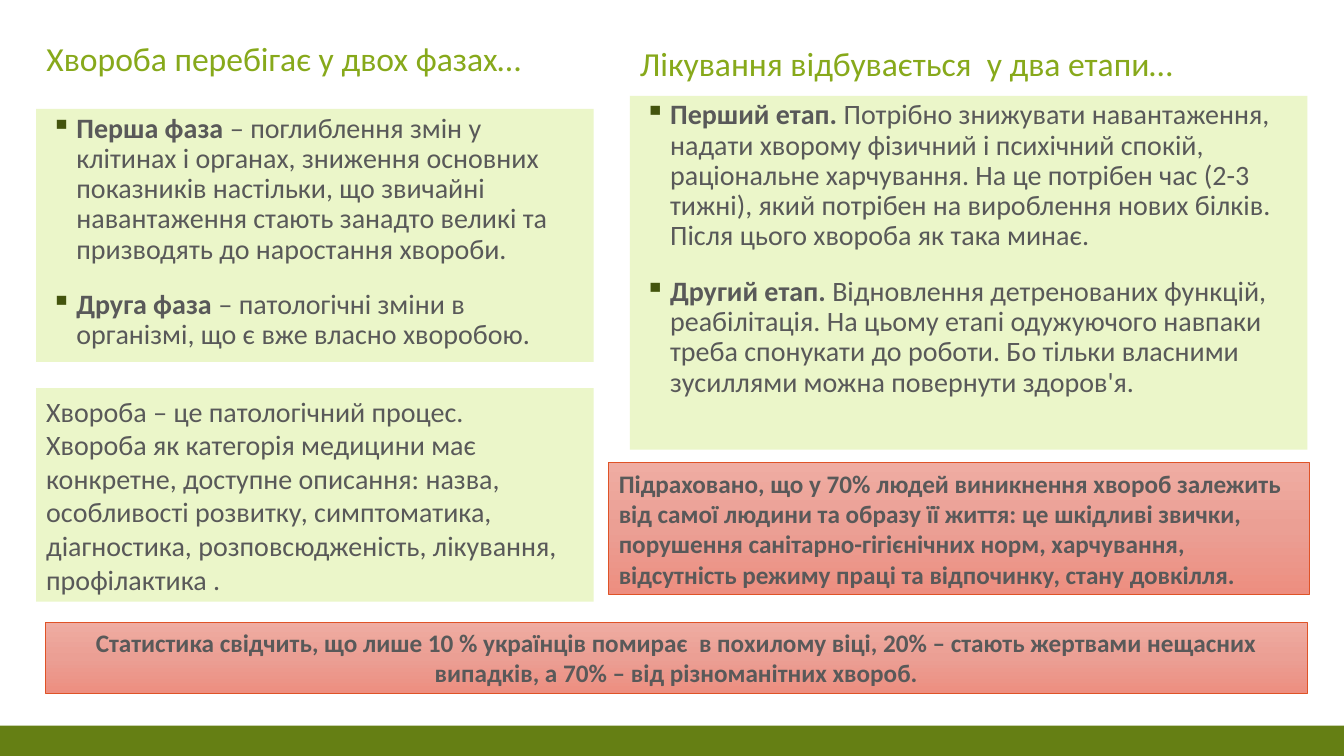
"""Builds a slide on the phases of illness and the stages of treatment."""
from copy import deepcopy
from dataclasses import dataclass
from typing import Any

from lxml.etree import SubElement
from pptx import Presentation
from pptx.dml.color import RGBColor
from pptx.enum.shapes import MSO_SHAPE as Preset
from pptx.enum.text import MSO_ANCHOR as Anchor, MSO_AUTO_SIZE as AutoSize, PP_ALIGN as Align
from pptx.oxml.ns import qn
from pptx.util import Pt

COLORS = {
    "bar": "657F14", "panel": "EBF6C9", "heading": "87A91B", "text": "595959",
    "bullet": "43540D", "alert_line": "DF5327",
}
ALERT_STOPS = {0: "EFACA2", 0.5: "EB9F94", 1: "ED8E80"}
Paragraphs = tuple[tuple[str, str], ...]


@dataclass(frozen=True)
class Heading:
    """A heading above one column."""
    left: float
    top: float
    width: float
    text: str


@dataclass(frozen=True)
class Box:
    """A rectangle whose paragraphs are pairs of bold and regular text."""
    left: float
    top: float
    width: float
    height: float
    paragraphs: Paragraphs = ()
    fill: str = "panel"
    size: float = 20
    bulleted: bool = False
    alert: bool = False
    align: Any = Align.LEFT


HEADINGS = (
    Heading(25.9, 23.8, 389.5, "Хвороба перебігає у двох фазах…"),
    Heading(450, 27.4, 478.8, "Лікування відбувається  у два етапи…"),
)

BOXES = (
    Box(0, 518.4, 960, 21.6, fill="bar"),
    Box(25.9, 77.8, 398.2, 180.7, (
        ("Перша фаза ", "‒ поглиблення змін у клітинах і органах, зниження основних показників "
         "настільки, що звичайні навантаження стають занадто великі та призводять до "
         "наростання хвороби."),
        ("Друга фаза ", "‒ патологічні зміни в організмі, що є вже власно хворобою."),
    ), bulleted=True),
    Box(450, 68.4, 483.8, 252.7, (
        ("Перший етап. ", "Потрібно знижувати навантаження, надати хворому фізичний і психічний "
         "спокій, раціональне харчування. На це потрібен час (2-3 тижні), який потрібен на "
         "вироблення нових білків. Після цього хвороба як така минає."),
        ("Другий етап. ", "Відновлення детренованих функцій, реабілітація. На цьому етапі "
         "одужуючого навпаки треба спонукати до роботи. Бо тільки власними зусиллями можна "
         "повернути здоров'я."),
    ), bulleted=True),
    Box(32.4, 444.2, 901.4, 51.1, (
        ("Статистика свідчить, що лише 10 % українців помирає  в похилому віці, 20% – стають "
         "жертвами нещасних випадків, а 70% – від різноманітних хвороб.", ""),
    ), size=18, alert=True, align=Align.CENTER),
    Box(25.9, 277.2, 398.2, 152.6, (
        ("", "Хвороба ‒ це патологічний процес."),
        ("", "Хвороба як категорія медицини має конкретне, доступне описання: назва, "
         "особливості розвитку, симптоматика, діагностика, розповсюдженість, лікування, "
         "профілактика ."),
    )),
    Box(434.9, 330.5, 500.4, 94.3, (
        ("Підраховано, що у 70% людей виникнення хвороб залежить від самої людини та образу "
         "її життя: це шкідливі звички, порушення санітарно-гігієнічних норм, харчування, "
         "відсутність режиму праці та відпочинку, стану довкілля.", ""),
    ), size=18, alert=True),
)


def set_values(target: Any, values: dict[str, Any]) -> None:
    """Set every named attribute on the target."""
    for name, value in values.items():
        setattr(target, name, value)


def add_text(paragraph: Any, text: str, size: float, color: str, bold: bool = False) -> None:
    """Add a formatted run to the paragraph."""
    run = paragraph.add_run()
    run.text = text
    set_values(run.font, {"name": "Calibri", "size": Pt(size), "bold": bold})
    run.font.color.rgb = RGBColor.from_string(COLORS[color])


def add_bullet(paragraph: Any) -> None:
    """Give the paragraph a square bullet, a hanging indent and list spacing."""
    set_values(paragraph, {"line_spacing": 0.9, "space_before": Pt(18)})
    properties = paragraph._p.get_or_add_pPr()
    properties.set("marL", str(Pt(21.6)))
    properties.set("indent", str(-Pt(18)))
    bullet_color = SubElement(properties, qn("a:buClr"))
    SubElement(bullet_color, qn("a:srgbClr"), val=COLORS["bullet"])
    SubElement(properties, qn("a:buChar"), char="▪")


def format_alert(shape: Any) -> None:
    """Apply the vertical red gradient and thin outline."""
    shape.fill.gradient()
    shape.fill.gradient_angle = 270
    stop_list = shape._element.spPr.find(".//" + qn("a:gsLst"))
    stop_list.insert(1, deepcopy(stop_list[0]))
    for stop, (position, color) in zip(shape.fill.gradient_stops, ALERT_STOPS.items()):
        stop.position = position
        stop.color.rgb = RGBColor.from_string(color)
    shape.line.color.rgb = RGBColor.from_string(COLORS["alert_line"])
    shape.line.width = Pt(0.5)


def draw_heading(shape: Any, heading: Heading) -> None:
    """Place and fill a heading."""
    set_values(shape, {"left": Pt(heading.left), "top": Pt(heading.top),
                       "width": Pt(heading.width), "height": Pt(36)})
    set_values(shape.text_frame, {"word_wrap": True, "auto_size": AutoSize.NONE,
                                  "vertical_anchor": Anchor.TOP})
    paragraph = shape.text_frame.paragraphs[0]
    paragraph.alignment = Align.LEFT
    add_text(paragraph, heading.text, 24, "heading")


def draw_box(slide: Any, box: Box) -> None:
    """Draw a rectangle with its text."""
    shape = slide.shapes.add_shape(
        Preset.RECTANGLE, Pt(box.left), Pt(box.top), Pt(box.width), Pt(box.height))
    shape.shadow.inherit = False
    if box.alert:
        format_alert(shape)
    else:
        shape.fill.solid()
        shape.fill.fore_color.rgb = RGBColor.from_string(COLORS[box.fill])
        shape.line.fill.background()
    frame = shape.text_frame
    set_values(frame, {"word_wrap": True,
                       "vertical_anchor": Anchor.TOP if box.bulleted else Anchor.MIDDLE})
    for index, (bold_text, regular_text) in enumerate(box.paragraphs):
        paragraph = frame.add_paragraph() if index else frame.paragraphs[0]
        paragraph.alignment = box.align
        if box.bulleted:
            add_bullet(paragraph)
        for text, bold in ((bold_text, True), (regular_text, False)):
            if text:
                add_text(paragraph, text, box.size, "text", bold)


def main() -> None:
    """Build and save the presentation."""
    presentation = Presentation()
    set_values(presentation, {"slide_width": Pt(960), "slide_height": Pt(540)})
    slide = presentation.slides.add_slide(presentation.slide_layouts[5])
    for box in BOXES:
        draw_box(slide, box)
    phases, stages = HEADINGS
    draw_heading(slide.shapes.title, phases)
    draw_heading(slide.shapes.add_textbox(0, 0, 0, 0), stages)
    presentation.save("out.pptx")


if __name__ == "__main__":
    main()
